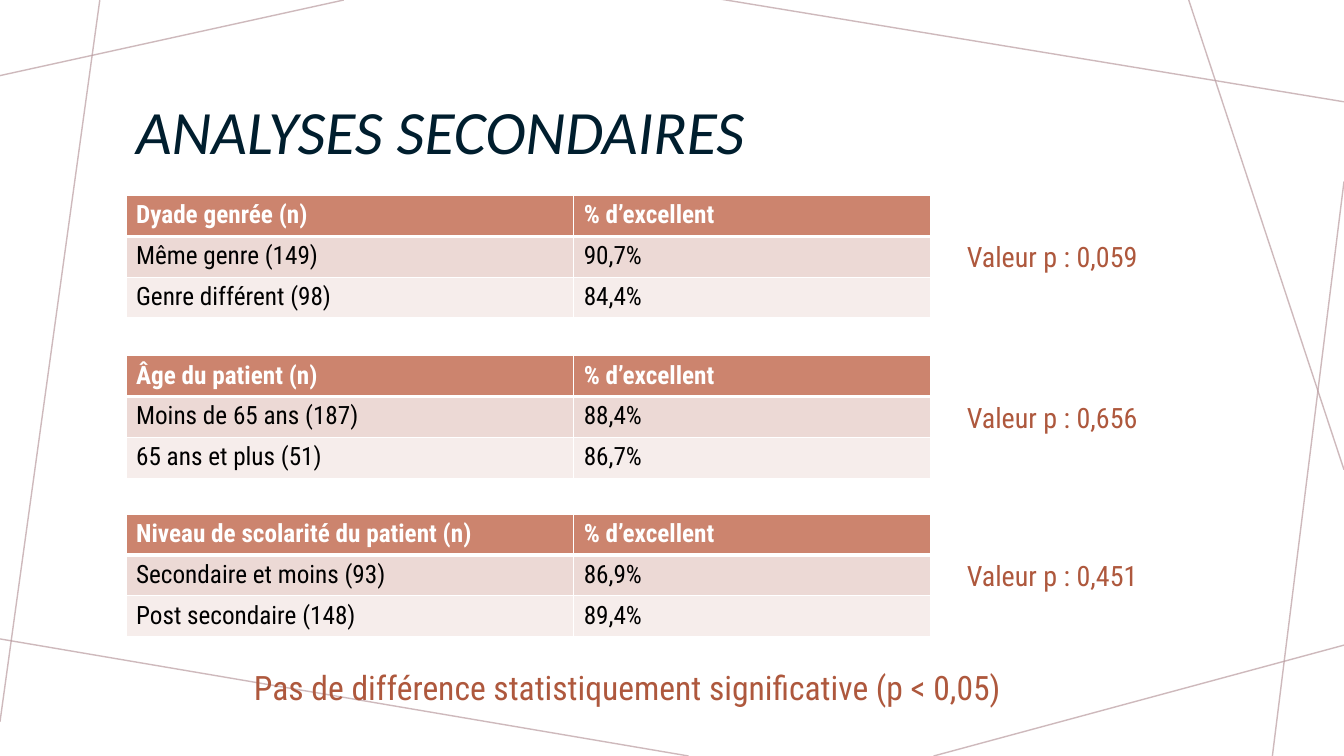
from lxml import etree
from pptx import Presentation
from pptx.dml.color import RGBColor
from pptx.enum import shapes, text
from pptx.oxml import ns
from pptx.util import Inches, Pt

NAVY = RGBColor(0x00, 0x1E, 0x2E)
RUST = RGBColor(0xAE, 0x58, 0x3D)
MAUVE = RGBColor(0xBA, 0x9C, 0xA0)
HEADER = RGBColor(0xCC, 0x84, 0x6E)
BAND_DARK = RGBColor(0xEC, 0xD9, 0xD5)
BAND_LIGHT = RGBColor(0xF6, 0xED, 0xEB)
WHITE = RGBColor(0xFF, 0xFF, 0xFF)
BLACK = RGBColor(0x00, 0x00, 0x00)

BODY_FONT = "Roboto Condensed"
ROW_FILLS = (HEADER, BAND_DARK, BAND_LIGHT)
COL_WIDTHS = (4.44, 3.54)
ROW_HEIGHT = 0.405

BACKGROUND_LINES = [
    (3.41, 0, 0, 0.75),
    (0.99, 0, 0, 7.16),
    (6.83, 7.5, -0.05, 6.33),
    (13.33, 6.4, 9.26, 7.5),
    (13.33, 1.8, 12.62, 7.5),
    (13.33, 4.66, 11.79, 0),
    (13.33, 1.01, 7.14, -0.01),
]

# Top of the table, rows, p value
ANALYSES = [
    (1.94, [("Dyade genrée (n)", "% d’excellent"),
            ("Même genre (149)", "90,7%"),
            ("Genre différent (98)", "84,4%")], "0,059"),
    (3.53, [("Âge du patient (n)", "% d’excellent"),
            ("Moins de 65 ans (187)", "88,4%"),
            ("65 ans et plus (51)", "86,7%")], "0,656"),
    (5.1, [("Niveau de scolarité du patient (n)", "% d’excellent"),
           ("Secondaire et moins (93)", "86,9%"),
           ("Post secondaire (148)", "89,4%")], "0,451"),
]


def add_run(p, words, size, color, font=BODY_FONT, bold=False, italic=False):
    r = p.add_run()
    r.text = words
    r.font.size = Pt(size)
    r.font.name = font
    r.font.bold = bold
    r.font.italic = italic
    r.font.color.rgb = color


def add_line(slide, x1, y1, x2, y2):
    line = slide.shapes.add_connector(
        shapes.MSO_CONNECTOR.STRAIGHT,
        Inches(x1), Inches(y1), Inches(x2), Inches(y2))
    line.line.color.rgb = MAUVE
    line.line.width = Pt(1)
    # 70 % opacity and no shadow
    color = line._element.spPr.find(".//" + ns.qn("a:srgbClr"))
    etree.SubElement(color, ns.qn("a:alpha"), val="70000")
    etree.SubElement(line._element.spPr, ns.qn("a:effectLst"))


def set_title(slide, words):
    sp = slide.shapes.title
    sp.left, sp.top = Inches(1.25), Inches(0.58)
    sp.width, sp.height = Inches(10.83), Inches(1.51)
    tf = sp.text_frame
    tf.vertical_anchor = text.MSO_ANCHOR.MIDDLE
    p = tf.paragraphs[0]
    p.alignment = text.PP_ALIGN.LEFT
    p.line_spacing = 0.9
    add_run(p, words, 44, NAVY, font="Calibri", italic=True)


def add_text(slide, x, y, w, h, words, size):
    sp = slide.shapes.add_textbox(Inches(x), Inches(y), Inches(w), Inches(h))
    tf = sp.text_frame
    tf.word_wrap = True
    tf.auto_size = text.MSO_AUTO_SIZE.SHAPE_TO_FIT_TEXT
    add_run(tf.paragraphs[0], words, size, RUST)


def set_borders(cell, widths):
    tcPr = cell._tc.get_or_add_tcPr()
    for side, width in widths.items():
        ln = etree.SubElement(tcPr, ns.qn("a:ln" + side), w=str(Pt(width)))
        fill = etree.SubElement(ln, ns.qn("a:solidFill"))
        etree.SubElement(fill, ns.qn("a:srgbClr"), val=str(WHITE))


def add_table(slide, top, rows):
    frame = slide.shapes.add_table(
        len(rows), len(COL_WIDTHS), Inches(1.25), Inches(top),
        Inches(sum(COL_WIDTHS)), Inches(ROW_HEIGHT * len(rows)))
    table = frame.table
    for column, width in zip(table.columns, COL_WIDTHS):
        column.width = Inches(width)
    for i, row in enumerate(rows):
        table.rows[i].height = Inches(ROW_HEIGHT)
        is_header = i == 0
        for j, words in enumerate(row):
            cell = table.cell(i, j)
            # The rule under the header is thicker than the others
            set_borders(cell, {"L": 1, "R": 1, "T": 3 if i == 1 else 1,
                               "B": 3 if is_header else 1})
            cell.fill.solid()
            cell.fill.fore_color.rgb = ROW_FILLS[i]
            add_run(cell.text_frame.paragraphs[0], words, 18,
                    WHITE if is_header else BLACK, bold=is_header)


def main():
    prs = Presentation()
    prs.slide_width, prs.slide_height = Inches(13.33), Inches(7.5)
    slide = prs.slides.add_slide(prs.slide_layouts[5])

    # Background lines
    for ends in BACKGROUND_LINES:
        add_line(slide, *ends)

    set_title(slide, "ANALYSES SECONDAIRES")

    # Tables, each with its p value
    for top, rows, p_value in ANALYSES:
        add_table(slide, top, rows)
        add_text(slide, 9.49, top + 0.39, 2.71, 0.44,
                 f"Valeur p : {p_value}", 20)

    # Conclusion
    add_text(slide, 2.42, 6.57, 8.5, 0.5,
             "Pas de différence statistiquement significative (p < 0,05)", 24)

    prs.save("out.pptx")


if __name__ == "__main__":
    main()
